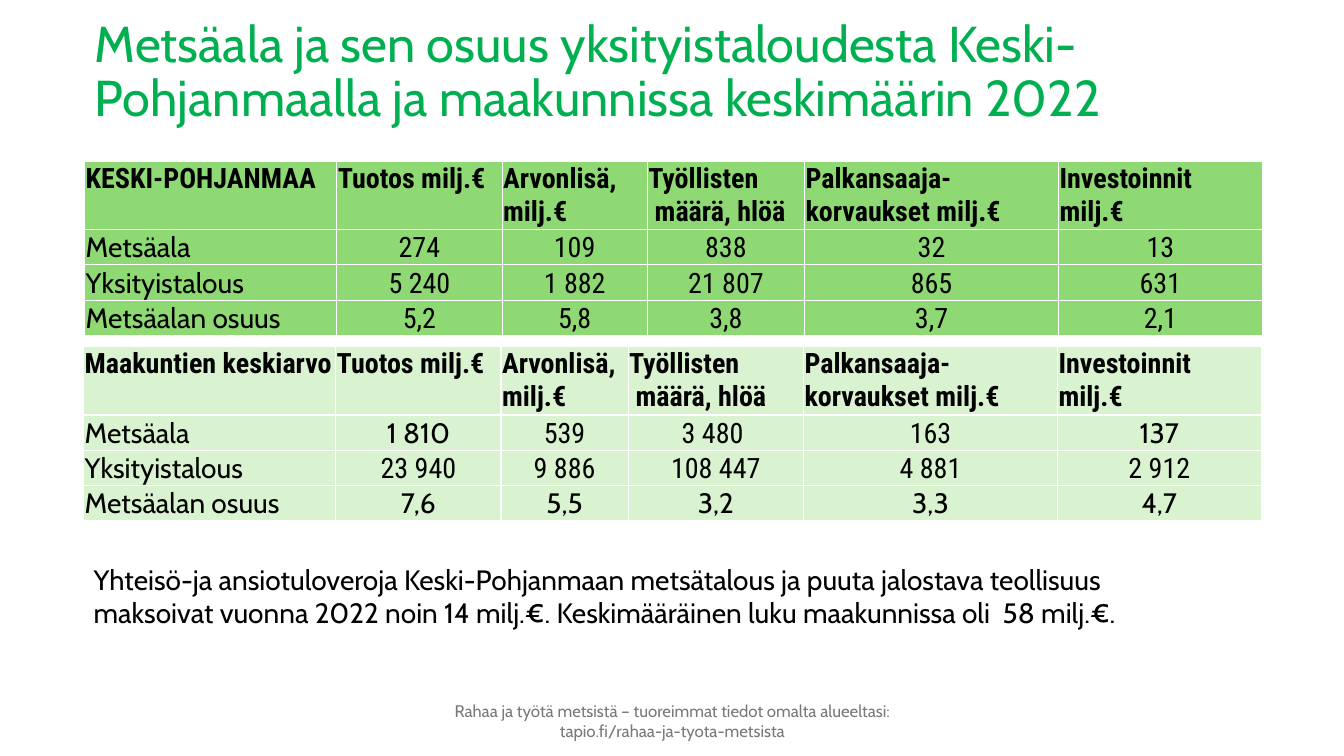
from pptx import Presentation
from pptx.dml.color import RGBColor
from pptx.enum.text import MSO_ANCHOR, MSO_AUTO_SIZE, PP_ALIGN
from pptx.oxml import parse_xml
from pptx.oxml.ns import nsdecls
from pptx.util import Inches, Pt

COLORS = {
    "title": "00B050",
    "text": "000000",
    "footer": "797979",
    "region": "8ED973",
    "average": "D9F2D0",
    "border": "FFFFFF",
}
BODY_FONT = "Cabin"
TABLE_FONT = "Roboto Condensed"

HEADINGS = ["Tuotos milj.€", "Arvonlisä, milj.€", "Työllisten\n määrä, hlöä",
            "Palkansaaja-korvaukset milj.€", "Investoinnit\nmilj.€"]
REGION_ROWS = [
    ["KESKI-POHJANMAA", *HEADINGS],
    ["Metsäala", "274", "109", "838", "32", "13"],
    ["Yksityistalous", "5 240", "1 882", "21 807", "865", "631"],
    ["Metsäalan osuus", "5,2", "5,8", "3,8", "3,7", "2,1"],
]
AVERAGE_ROWS = [
    ["Maakuntien keskiarvo", *HEADINGS],
    ["Metsäala", "1 810", "539", "3 480 ", "163", "137"],
    ["Yksityistalous", "23 940", "9 886", "108 447", "4 881", "2 912"],
    ["Metsäalan osuus", "7,6", "5,5", "3,2", "3,3", "4,7"],
]
# Figures of the average table that are set in the body font
AVERAGE_BODY_CELLS = {(1, 1), (1, 5)} | {(3, column) for column in range(1, 6)}
ROW_HEIGHTS = [0.65, 0.35, 0.35, 0.35]


def write_text(frame, text, size=20, font=BODY_FONT, color="text", bold=False,
               align=PP_ALIGN.LEFT, line_spacing=None):
    """Write one paragraph for each line of text."""
    for index, line in enumerate(text.split("\n")):
        para = frame.add_paragraph() if index else frame.paragraphs[0]
        para.alignment = align
        if line_spacing:
            para.line_spacing = line_spacing
        span = para.add_run()
        span.text = line
        span.font.name = font
        span.font.size = Pt(size)
        span.font.bold = bold
        span.font.color.rgb = RGBColor.from_string(COLORS[color])


def add_title(page, box, text):
    title = page.shapes.title
    title.left, title.top, title.width, title.height = map(Inches, box)
    frame = title.text_frame
    frame.word_wrap = True
    frame.auto_size = MSO_AUTO_SIZE.NONE
    frame.vertical_anchor = MSO_ANCHOR.MIDDLE
    write_text(frame, text, size=36, color="title", line_spacing=0.9)


def add_text(page, box, text, anchor=MSO_ANCHOR.TOP, **text_format):
    frame = page.shapes.add_textbox(*map(Inches, box)).text_frame
    frame.word_wrap = True
    frame.vertical_anchor = anchor
    write_text(frame, text, **text_format)


def add_borders(cell):
    properties = cell._tc.get_or_add_tcPr()
    for side in ("lnL", "lnR", "lnT", "lnB"):
        properties.append(parse_xml(
            f'<a:{side} {nsdecls("a")} w="{Pt(1)}"><a:solidFill>'
            f'<a:srgbClr val="{COLORS["border"]}"/></a:solidFill></a:{side}>'))


def add_figures_table(page, left, top, widths, rows, fill, body_cells=()):
    """Table with bold headings, row labels and centred figures."""
    table = page.shapes.add_table(
        len(rows), len(widths), Inches(left), Inches(top),
        Inches(sum(widths)), Inches(sum(ROW_HEIGHTS))).table
    table.first_row = table.horz_banding = False
    for column, width in zip(table.columns, widths):
        column.width = Inches(width)
    for row, height in zip(table.rows, ROW_HEIGHTS):
        row.height = Inches(height)

    for row_index, texts in enumerate(rows):
        for column_index, text in enumerate(texts):
            heading = row_index == 0
            label = column_index == 0 and not heading
            in_body_font = label or (row_index, column_index) in body_cells
            cell = table.cell(row_index, column_index)
            cell.margin_left = cell.margin_right = cell.margin_top = Inches(0.01)
            cell.margin_bottom = 0
            cell.vertical_anchor = MSO_ANCHOR.TOP if heading else MSO_ANCHOR.BOTTOM
            add_borders(cell)
            cell.fill.solid()
            cell.fill.fore_color.rgb = RGBColor.from_string(COLORS[fill])
            write_text(cell.text_frame, text, bold=heading,
                       font=BODY_FONT if in_body_font else TABLE_FONT,
                       align=PP_ALIGN.LEFT if heading or label else PP_ALIGN.CENTER)


def build_slide(deck):
    page = deck.slides.add_slide(deck.slide_layouts[5])
    # Footer
    add_text(page, (4.32, 6.95, 4.7, 0.4),
             "Rahaa ja työtä metsistä – tuoreimmat tiedot omalta alueeltasi: "
             "tapio.fi/rahaa-ja-tyota-metsista",
             anchor=MSO_ANCHOR.MIDDLE, size=12, color="footer",
             align=PP_ALIGN.CENTER)
    # Title
    add_title(page, (0.84, 0, 12.19, 1.45),
              "Metsäala ja sen osuus yksityistaloudesta Keski-Pohjanmaalla "
              "ja maakunnissa keskimäärin 2022")
    # Region and average tables
    add_figures_table(page, 0.84, 1.6, [2.5, 1.64, 1.44, 1.56, 2.52, 2.02],
                      REGION_ROWS, "region")
    add_figures_table(page, 0.83, 3.44, [2.5, 1.64, 1.26, 1.74, 2.52, 2.02],
                      AVERAGE_ROWS, "average", AVERAGE_BODY_CELLS)
    # Tax summary
    add_text(page, (0.83, 5.53, 10.9, 0.77),
             "Yhteisö-ja ansiotuloveroja Keski-Pohjanmaan metsätalous ja puuta "
             "jalostava teollisuus maksoivat vuonna 2022 noin 14 milj.€. "
             "Keskimääräinen luku maakunnissa oli  58 milj.€.")


def main():
    deck = Presentation()
    deck.slide_width = Inches(13.33)
    deck.slide_height = Inches(7.5)
    build_slide(deck)
    deck.save("out.pptx")


if __name__ == "__main__":
    main()
